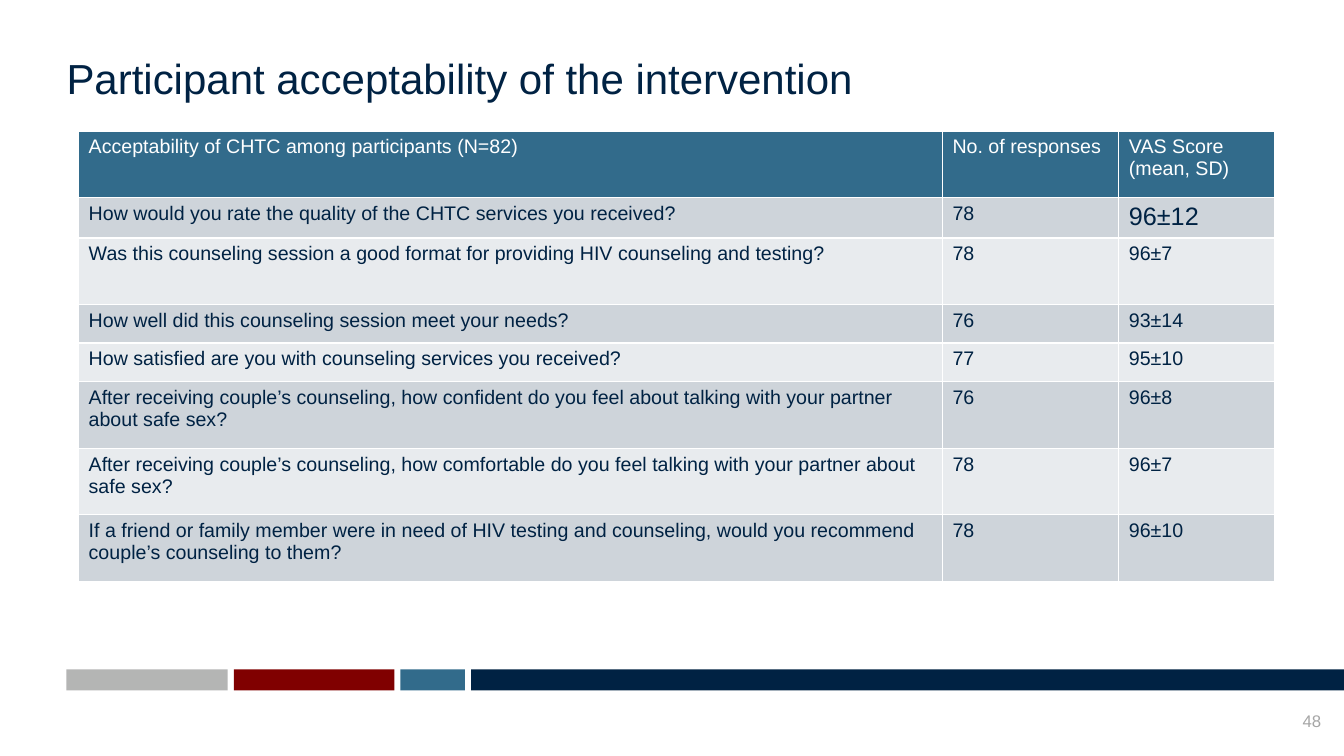
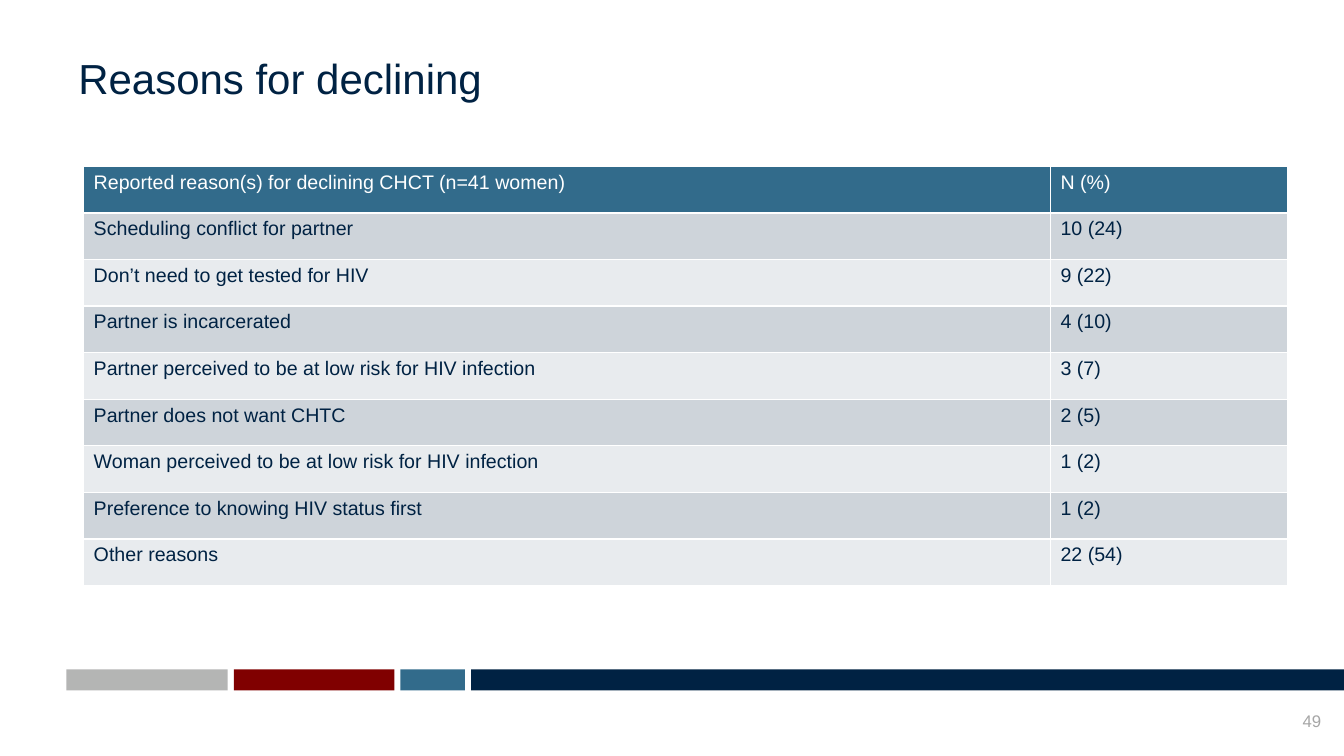
from lxml import etree
from pptx import Presentation, util as u
from pptx.dml.color import RGBColor
from pptx.enum import shapes, text
from pptx.oxml.ns import qn

NAVY, TEAL, MAROON, GREY = "002243", "326B8B", "800000", "B4B5B4"
WHITE, PALE_GREY, DARK_ROW, LIGHT_ROW = "FFFFFF", "A6A6A6", "CED4DA", "E8EBEE"
COLUMNS, ROWS = 160, 90
LEFT_MARGIN = 7.92


def rgb(color):
    return RGBColor.from_string(color)


def cells(count):
    """Turn grid cells, twelve to the inch, into a length."""
    return u.Inches(count / 12)


class Deck:
    font_name = "Arial"

    def __init__(self):
        self.deck = Presentation()
        self.deck.slide_width = cells(COLUMNS)
        self.deck.slide_height = cells(ROWS)
        self.page = None

    def add_page(self, title, number, title_indent=0):
        self.page = self.deck.slides.add_slide(self.deck.slide_layouts[6])
        self.add_band()
        self.add_text(title, LEFT_MARGIN, 6.24, 145.3, 6, 30, NAVY, indent=title_indent)
        self.add_text(str(number), 153.2, 84.6, 4.1, 2.4, 12, PALE_GREY,
                      align=text.PP_ALIGN.RIGHT, anchor=text.MSO_ANCHOR.BOTTOM)

    def add_band(self):
        left, gap = LEFT_MARGIN, 0.72
        for color, width in ((GREY, 19.2), (MAROON, 19.1), (TEAL, 7.7), (NAVY, None)):
            width = width or COLUMNS - left
            bar = self.page.shapes.add_shape(
                shapes.MSO_SHAPE.RECTANGLE,
                cells(left), cells(79.7), cells(width), cells(2.5))
            bar.shadow.inherit = False
            bar.fill.solid()
            bar.fill.fore_color.rgb = rgb(color)
            bar.line.fill.background()
            left += width + gap

    def style(self, para, size, color):
        para.font.name = self.font_name
        para.font.size = u.Pt(size)
        para.font.color.rgb = rgb(color)

    def add_text(self, words, left, top, width, height, size, color, indent=0,
                 align=text.PP_ALIGN.LEFT, anchor=text.MSO_ANCHOR.TOP):
        box = self.page.shapes.add_textbox(
            cells(left), cells(top), cells(width), cells(height))
        frame = box.text_frame
        frame.word_wrap = True
        frame.vertical_anchor = anchor
        frame.margin_left = cells(indent)
        frame.margin_top = frame.margin_right = frame.margin_bottom = 0
        para = frame.paragraphs[0]
        para.text = words
        para.alignment = align
        self.style(para, size, color)

    def add_borders(self, cell):
        properties = cell._tc.get_or_add_tcPr()
        for side in ("a:lnL", "a:lnR", "a:lnT", "a:lnB"):
            line = etree.SubElement(properties, qn(side), w=str(u.Pt(1)))
            fill = etree.SubElement(line, qn("a:solidFill"))
            etree.SubElement(fill, qn("a:srgbClr"), val=WHITE)

    def add_table(self, records, left, top, widths, heights, large_cells=()):
        """Draw a table with a header; large_cells holds (row, column) pairs set at 18 pt."""
        table = self.page.shapes.add_table(
            len(records), len(widths), cells(left), cells(top),
            cells(sum(widths)), cells(sum(heights))).table
        table.first_row = table.horz_banding = False
        for column, width in zip(table.columns, widths):
            column.width = cells(width)
        for index, (record, height) in enumerate(zip(records, heights)):
            table.rows[index].height = cells(height)
            fill = (LIGHT_ROW, DARK_ROW)[index % 2] if index else TEAL
            for place, words in enumerate(record):
                cell = table.cell(index, place)
                self.add_borders(cell)
                cell.fill.solid()
                cell.fill.fore_color.rgb = rgb(fill)
                cell.text = words
                size = 18 if (index, place) in large_cells else 14
                for para in cell.text_frame.paragraphs:
                    self.style(para, size, NAVY if index else WHITE)


ACCEPTABILITY = [
    ("Acceptability of CHTC among participants (N=82)", "No. of responses",
     "VAS Score\n(mean, SD)"),
    ("How would you rate the quality of the CHTC services you received?", "78", "96±12"),
    ("Was this counseling session a good format for providing HIV counseling and testing?",
     "78", "96±7"),
    ("How well did this counseling session meet your needs?", "76", "93±14"),
    ("How satisfied are you with counseling services you received?", "77", "95±10"),
    ("After receiving couple’s counseling, how confident do you feel about talking "
     "with your partner about safe sex?", "76", "96±8"),
    ("After receiving couple’s counseling, how comfortable do you feel talking "
     "with your partner about safe sex?", "78", "96±7"),
    ("If a friend or family member were in need of HIV testing and counseling, "
     "would you recommend couple’s counseling to them?", "78", "96±10"),
]

REASONS = [
    ("Reported reason(s) for declining CHCT (n=41 women)", "N (%)"),
    ("Scheduling conflict for partner", "10 (24)"),
    ("Don’t need to get tested for HIV", "9 (22)"),
    ("Partner is incarcerated", "4 (10)"),
    ("Partner perceived to be at low risk for HIV infection", "3 (7)"),
    ("Partner does not want CHTC", "2 (5)"),
    ("Woman perceived to be at low risk for HIV infection", "1 (2)"),
    ("Preference to knowing HIV status first", "1 (2)"),
    ("Other reasons", "22 (54)"),
]


def main():
    deck = Deck()

    deck.add_page("Participant acceptability of the intervention", 48)
    tall, short = 7.92, 4.6
    deck.add_table(ACCEPTABILITY, 9.36, 15.6, (102.84, 21, 18.6),
                   (tall, short, tall, short, short, tall, tall, tall),
                   large_cells={(1, 2)})

    deck.add_page("Reasons for declining", 49, title_indent=1.4)
    deck.add_table(REASONS, 9.96, 19.8, (115.1, 28.2), [5.55] * len(REASONS))

    deck.deck.save("out.pptx")


if __name__ == "__main__":
    main()
